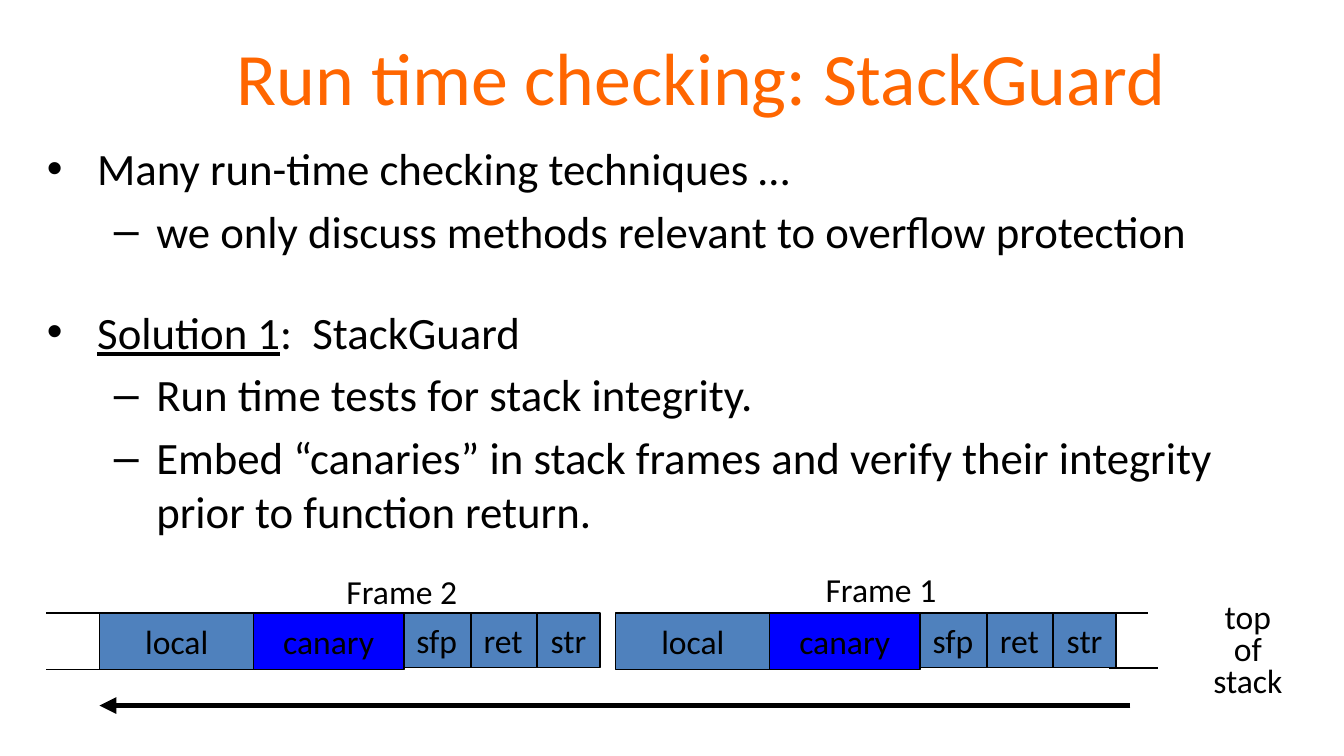
import pptx
import pptx.util
import pptx.dml.color
import pptx.enum.shapes
import pptx.enum.text
import lxml.etree
import dataclasses

PX = 4572


@dataclasses.dataclass(frozen=True)
class Theme:
    font: str = "Calibri"
    title: str = "FF6600"
    ink: str = "000000"
    cell: str = "4F81BD"
    guard: str = "0000FF"
    head: float = 39.6
    body: float = 24
    label: float = 18
    thin: float = 0.75
    thick: float = 3


THEME = Theme()
ALIGN = pptx.enum.text.PP_ALIGN
ANCHOR = pptx.enum.text.MSO_ANCHOR


def px(*sizes):
    return [pptx.util.Emu(size * PX) for size in sizes]


def color(code):
    return pptx.dml.color.RGBColor.from_string(code)


def child(node, tag, **attrs):
    name = pptx.oxml.ns.qn(tag)
    return lxml.etree.SubElement(node, name, attrs)


def style(para, size, ink=THEME.ink):
    for run in para.runs:
        run.font.name = THEME.font
        run.font.size = pptx.util.Pt(size)
        run.font.color.rgb = color(ink)


def write(frame, text, size, ink=THEME.ink, wrap=False, anchor=ANCHOR.TOP):
    frame.text = text
    frame.word_wrap = wrap
    frame.vertical_anchor = anchor
    para = frame.paragraphs[0]
    para.alignment = ALIGN.CENTER
    style(para, size, ink)
    return para


def label(slide, box, text):
    frame = slide.shapes.add_textbox(*px(*box)).text_frame
    return write(frame, text, THEME.label)


def line(slide, start, end, width=THEME.thin):
    kind = pptx.enum.shapes.MSO_CONNECTOR.STRAIGHT
    link = slide.shapes.add_connector(kind, *px(*start, *end))
    link.line.color.rgb = color(THEME.ink)
    link.line.width = pptx.util.Pt(width)
    child(link._element.spPr, "a:effectLst")
    return link


def title(slide, box):
    frame = slide.shapes.add_textbox(*px(*box)).text_frame
    write(frame, "Run time checking: StackGuard", THEME.head,
          THEME.title, True, ANCHOR.MIDDLE)


def bullet(para, level, gap):
    mark, left, hang = (("•", 75, 75), ("–", 163, 63))[level]
    para.level = level
    para.space_before = pptx.util.Pt(gap)
    props = para._p.get_or_add_pPr()
    props.set("marL", str(left * PX))
    props.set("indent", str(-hang * PX))
    child(props, "a:buFont", typeface="Arial")
    child(props, "a:buChar", char=mark)


def body(slide, box):
    items = (
        (0, 4.8, "", "Many run-time checking techniques …"),
        (1, 4.8, "", "we only discuss methods relevant to overflow protection"),
        (0, 25.2, "Solution 1", ":  StackGuard"),
        (1, 4.8, "", "Run time tests for stack integrity."),
        (1, 4.8, "", "Embed “canaries” in stack frames and verify their "
                     "integrity prior to function return."),
    )
    frame = slide.shapes.add_textbox(*px(*box)).text_frame
    frame.word_wrap = True
    for spot, (level, gap, lead, text) in enumerate(items):
        para = frame.add_paragraph() if spot else frame.paragraphs[0]
        para.text = lead or text
        if lead:
            para.runs[0].font.underline = True
            para.add_run().text = text
        bullet(para, level, gap)
        style(para, THEME.body)


def cell(slide, box, text, fill):
    kind = pptx.enum.shapes.MSO_SHAPE.RECTANGLE
    rect = slide.shapes.add_shape(kind, *px(*box))
    rect.shadow.inherit = False
    rect.fill.solid()
    rect.fill.fore_color.rgb = color(fill)
    rect.line.color.rgb = color(THEME.ink)
    rect.line.width = pptx.util.Pt(THEME.thin)
    write(rect.text_frame, text, THEME.label, anchor=ANCHOR.MIDDLE)


def block(slide, left, top, name, shift, rise):
    cells = (
        ("str", 651, 94, 81, THEME.cell),
        ("ret", 551, 100, 81, THEME.cell),
        ("sfp", 451, 102, 81, THEME.cell),
        ("local", 0, 230, 84, THEME.cell),
        ("canary", 229, 224, 84, THEME.guard),
    )
    for text, step, wide, high, fill in cells:
        cell(slide, (left + step, top, wide, high), text, fill)
    label(slide, (left + shift, top - rise, 208, 80), name)


def stack(slide, left, top):
    for start, end, drop in ((1566, 1640, 0), (1582, 1656, 82),
                             (98, 0, 84), (98, 0, 0)):
        line(slide, (left + start, top + drop), (left + end, top + drop))
    block(slide, left + 80, top, "Frame 2", 346, 72)
    block(slide, left + 848, top, "Frame 1", 291, 75)
    note = label(slide, (left + 1716, top - 24, 146, 168), "top\vof\vstack")
    note.line_spacing = 0.8
    arrow = line(slide, (left + 1614, top + 138), (left + 80, top + 138),
                 THEME.thick)
    child(arrow.line._get_or_add_ln(), "a:tailEnd", type="triangle")


def main():
    deck = pptx.Presentation()
    deck.slide_width, deck.slide_height = px(2000, 1125)
    slide = deck.slides.add_slide(deck.slide_layouts[6])
    title(slide, (88, 38, 1912, 150))
    body(slide, (50, 200, 1900, 812))
    stack(slide, 68, 912)
    deck.save("out.pptx")


if __name__ == "__main__":
    main()
